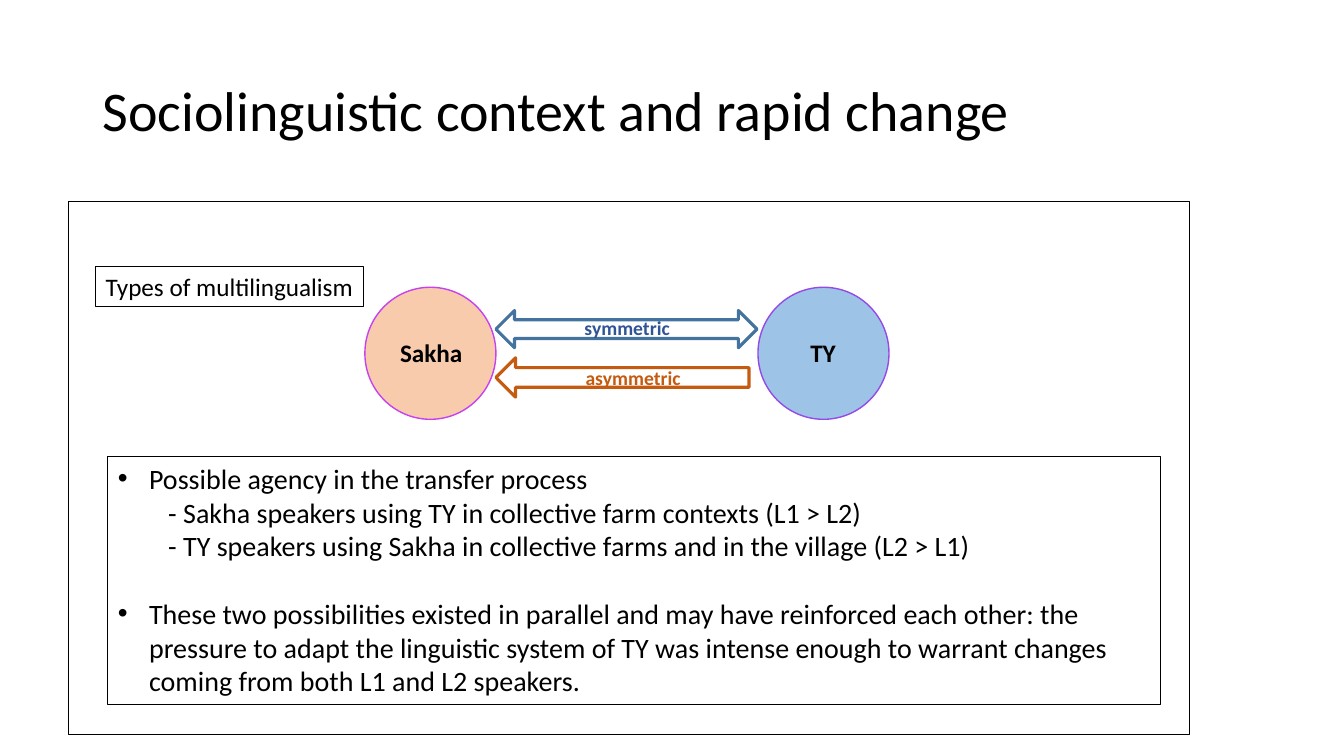
import pptx
import pptx.util
import pptx.dml.color
import pptx.enum.shapes
import pptx.enum.text
import lxml.etree
from dataclasses import dataclass

SHAPE = pptx.enum.shapes.MSO_SHAPE
ANCHOR = pptx.enum.text.MSO_ANCHOR


@dataclass(frozen=True)
class Theme:
    font: str = "Calibri"
    ink: str = "000000"
    sakha: str = "F8CBAD"
    sakha_line: str = "C641EF"
    ty: str = "9DC3E6"
    ty_line: str = "944AE6"
    symmetric_line: str = "43739E"
    symmetric: str = "2F5597"
    asymmetric: str = "C55A11"
    title: int = 40
    body: int = 20
    label: int = 18
    small: int = 14
    hair: float = 0.75
    thin: float = 1
    thick: float = 2.25


T = Theme()

# Content: every box is left, top, width, height in percent of the slide
TITLE = ("Sociolinguistic context and rapid change", (6.9, 5.33, 86.25, 19.33))
FRAME = (5.1, 26.67, 83.4, 70.53)
HEADING = ("Types of multilingualism", (7.13, 35.2, 19.95, 5.33))
# preset, box, fill, line, line width
FIGURES = [
    (SHAPE.OVAL, (27.15, 38, 9.75, 17.47), T.sakha, T.sakha_line, T.thin),
    (SHAPE.OVAL, (56.4, 38, 9.75, 17.47), T.ty, T.ty_line, T.thin),
    (SHAPE.LEFT_RIGHT_ARROW, (36.9, 41.07, 19.43, 4.93), None, T.symmetric_line, T.thick),
    (SHAPE.LEFT_ARROW, (36.9, 47.33, 18.83, 5.2), None, T.asymmetric, T.thick),
]
# text, box, size, colour
LABELS = [
    ("Sakha", (29.03, 44, 6.45, 5.33), T.label, T.ink),
    ("TY", (59.55, 44, 3.38, 5.33), T.label, T.ink),
    ("symmetric", (42.75, 41.07, 8.18, 4.53), T.small, T.symmetric),
    ("asymmetric", (42.83, 47.73, 8.78, 4.53), T.small, T.asymmetric),
]
NOTES_BOX = (8.03, 60.4, 78.3, 32.8)
NOTES = [
    ("Possible agency in the transfer process", [
        "- Sakha speakers using TY in collective farm contexts (L1 > L2)",
        "- TY speakers using Sakha in collective farms and in the village (L2 > L1)",
    ]),
    ("These two possibilities existed in parallel and may have reinforced each other: "
     "the pressure to adapt the linguistic system of TY was intense enough to warrant "
     "changes coming from both L1 and L2 speakers.", []),
]
BULLET_INDENT, SUB_INDENT, NOTE_GAP = 0.31, 0.5, 24.4

prs = pptx.Presentation()
prs.slide_width = pptx.util.Inches(13.333)
prs.slide_height = pptx.util.Inches(7.5)
s = prs.slides.add_slide(prs.slide_layouts[6])


def place(box):
    sides = (prs.slide_width, prs.slide_height) * 2
    return [round(share * side / 100) for share, side in zip(box, sides)]


def rgb(colour):
    return pptx.dml.color.RGBColor.from_string(colour)


def add_figure(preset, box, fill, line, width):
    sp = s.shapes.add_shape(preset, *place(box))
    sp.shadow.inherit = False
    if fill:
        sp.fill.solid()
        sp.fill.fore_color.rgb = rgb(fill)
    else:
        sp.fill.background()
    sp.line.color.rgb = rgb(line)
    sp.line.width = pptx.util.Pt(width)
    return sp


def write(p, text, size, colour=T.ink, bold=False):
    p.alignment = pptx.enum.text.PP_ALIGN.LEFT
    r = p.add_run()
    r.text = text
    r.font.name = T.font
    r.font.size = pptx.util.Pt(size)
    r.font.bold = bold
    r.font.color.rgb = rgb(colour)


def indent(p, left, bullet=None):
    pPr = p._p.get_or_add_pPr()
    pPr.set("marL", str(pptx.util.Inches(left)))
    pPr.set("indent", str(-pptx.util.Inches(left) if bullet else 0))
    if bullet:
        ns = "{http://schemas.openxmlformats.org/drawingml/2006/main}"
        lxml.etree.SubElement(pPr, ns + "buFont").set("typeface", "Arial")
        lxml.etree.SubElement(pPr, ns + "buChar").set("char", bullet)


def add_text(text, box, size, colour=T.ink, bold=False, wrap=False, anchor=ANCHOR.TOP):
    tf = s.shapes.add_textbox(*place(box)).text_frame
    tf.word_wrap = wrap
    tf.vertical_anchor = anchor
    write(tf.paragraphs[0], text, size, colour, bold)
    return tf


# Title and outer frame
tf = add_text(*TITLE, T.title, wrap=True, anchor=ANCHOR.MIDDLE)
tf.paragraphs[0].line_spacing = 0.9
add_figure(SHAPE.RECTANGLE, FRAME, None, T.ink, T.thin)

# Boxed heading
text, box = HEADING
tf = add_figure(SHAPE.RECTANGLE, box, None, T.ink, T.hair).text_frame
tf.word_wrap = False
tf.vertical_anchor = ANCHOR.TOP
write(tf.paragraphs[0], text, T.label)

# Language circles, arrows and their labels
for figure in FIGURES:
    add_figure(*figure)
for label in LABELS:
    add_text(*label, bold=True)

# Boxed notes
tf = add_figure(SHAPE.RECTANGLE, NOTES_BOX, None, T.ink, T.hair).text_frame
tf.word_wrap = True
tf.vertical_anchor = ANCHOR.TOP
for i, (point, details) in enumerate(NOTES):
    p = tf.add_paragraph() if i else tf.paragraphs[0]
    p.space_before = pptx.util.Pt(NOTE_GAP if i else 0)
    write(p, point, T.body)
    indent(p, BULLET_INDENT, "•")
    for detail in details:
        p = tf.add_paragraph()
        p.level = 1
        write(p, detail, T.body)
        indent(p, SUB_INDENT)

prs.save("out.pptx")
